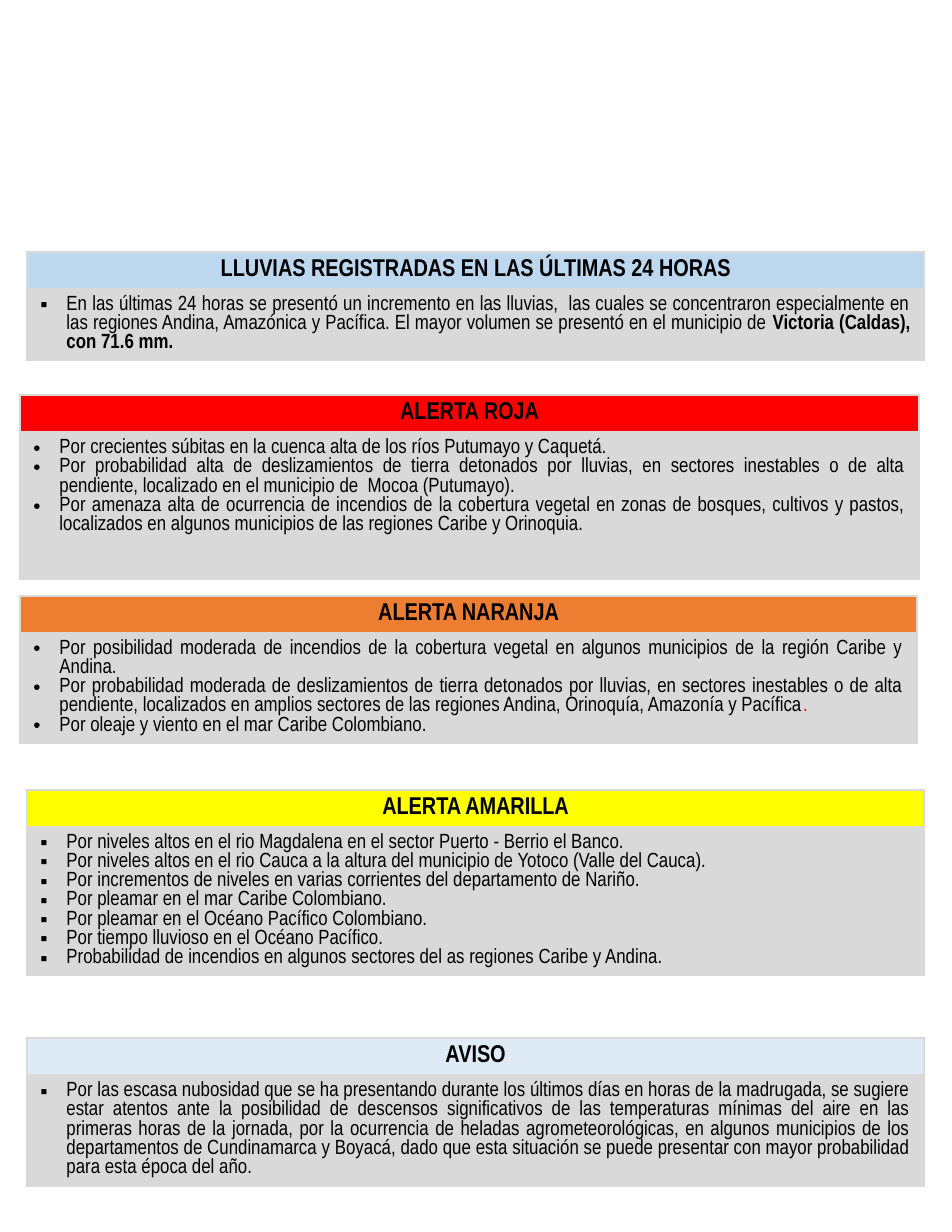
import lxml.etree
import pptx
import pptx.dml.color
import pptx.enum.text
import pptx.oxml
import pptx.oxml.ns
import pptx.util

BLACK = pptx.dml.color.RGBColor(0x00, 0x00, 0x00)
RED = pptx.dml.color.RGBColor(0xFF, 0x00, 0x00)
ORANGE = pptx.dml.color.RGBColor(0xED, 0x7D, 0x31)
YELLOW = pptx.dml.color.RGBColor(0xFF, 0xFF, 0x00)
BLUE = pptx.dml.color.RGBColor(0xBD, 0xD7, 0xEE)
PALE_BLUE = pptx.dml.color.RGBColor(0xDE, 0xEB, 0xF7)
GRAY = pptx.dml.color.RGBColor(0xD9, 0xD9, 0xD9)

FONT = "Arial Narrow"
SQUARE, DOT = "▪", "•"
PLAIN, BOLD, RED_TEXT = "plain", "bold", "red"

PANELS = [
    {
        "title": "LLUVIAS REGISTRADAS EN LAS ÚLTIMAS 24 HORAS",
        "color": BLUE, "bullet": SQUARE, "box": (27, 252, 897), "rows": (36, 72),
        "items": [
            [("En las últimas 24 horas se presentó un incremento en las lluvias,  las cuales se "
              "concentraron especialmente en las regiones Andina, Amazónica y Pacífica. El mayor "
              "volumen se presentó en el municipio de ", PLAIN),
             ("Victoria (Caldas), con 71.6 mm.", BOLD)],
        ],
    },
    {
        "title": "ALERTA ROJA",
        "color": RED, "bullet": DOT, "box": (20, 395, 899), "rows": (37, 147),
        "items": [
            [("Por crecientes súbitas en la cuenca alta de los ríos Putumayo y Caquetá.", PLAIN)],
            [("Por probabilidad alta de deslizamientos de tierra detonados por lluvias, en sectores "
              "inestables o de alta pendiente, localizado en el municipio de  Mocoa (Putumayo).", PLAIN)],
            [("Por amenaza alta de ocurrencia de incendios de la cobertura vegetal en zonas de bosques, "
              "cultivos y pastos, localizados en algunos municipios de las regiones Caribe y Orinoquia.",
              PLAIN)],
        ],
    },
    {
        "title": "ALERTA NARANJA",
        "color": ORANGE, "bullet": DOT, "box": (20, 596, 897), "rows": (36, 111),
        "items": [
            [("Por posibilidad moderada de incendios de la cobertura vegetal en algunos municipios de "
              "la región Caribe y Andina.", PLAIN)],
            [("Por probabilidad moderada de deslizamientos de tierra detonados por lluvias, en sectores "
              "inestables o de alta pendiente, localizados en amplios sectores de las regiones Andina, "
              "Orinoquía, Amazonía y Pacífica", PLAIN),
             (".", RED_TEXT)],
            [("Por oleaje y viento en el mar Caribe Colombiano.", PLAIN)],
        ],
    },
    {
        "title": "ALERTA AMARILLA",
        "color": YELLOW, "bullet": SQUARE, "box": (27, 790, 897), "rows": (36, 149),
        "items": [
            [("Por niveles altos en el rio Magdalena en el sector Puerto - Berrio el Banco.", PLAIN)],
            [("Por niveles altos en el rio Cauca a la altura del municipio de Yotoco (Valle del Cauca).",
              PLAIN)],
            [("Por incrementos de niveles en varias corrientes del departamento de Nariño.", PLAIN)],
            [("Por pleamar en el mar Caribe Colombiano.", PLAIN)],
            [("Por pleamar en el Océano Pacífico Colombiano.", PLAIN)],
            [("Por tiempo lluvioso en el Océano Pacífico.", PLAIN)],
            [("Probabilidad de incendios en algunos sectores del as regiones Caribe y Andina.", PLAIN)],
        ],
    },
    {
        "title": "AVISO",
        "color": PALE_BLUE, "bullet": SQUARE, "box": (27, 1038, 897), "rows": (37, 111),
        "items": [
            [("Por las escasa nubosidad que se ha presentando durante los últimos días en horas de la "
              "madrugada, se sugiere estar atentos ante la posibilidad de descensos significativos de "
              "las temperaturas mínimas del aire en las primeras horas de la jornada, por la ocurrencia "
              "de heladas agrometeorológicas, en algunos municipios de los departamentos de Cundinamarca "
              "y Boyacá, dado que esta situación se puede presentar con mayor probabilidad para esta "
              "época del año.", PLAIN)],
        ],
    },
]

SLIDE_SIZE = (952, 1232)
INDENT = 26
PIXELS_PER_INCH = 134.3


def px(length):
    return pptx.util.Emu(round(length * 914400 / PIXELS_PER_INCH))


def style_cell(cell, color):
    properties = cell._tc.get_or_add_tcPr()
    for side in ("lnL", "lnR", "lnT", "lnB"):
        properties.append(pptx.oxml.parse_xml(
            f'<a:{side} {pptx.oxml.ns.nsdecls("a")} w="12700"><a:solidFill>'
            f'<a:srgbClr val="{GRAY}"/></a:solidFill></a:{side}>'))
    cell.fill.solid()
    cell.fill.fore_color.rgb = color


def style_paragraph(paragraph, size, bold, alignment):
    paragraph.alignment = alignment
    paragraph.font.name = FONT
    paragraph.font.size = pptx.util.Pt(size)
    paragraph.font.bold = bold
    paragraph.font.color.rgb = BLACK


def add_bullet(paragraph, character):
    properties = paragraph._p.get_or_add_pPr()
    properties.set("marL", str(px(INDENT)))
    properties.set("indent", str(-px(INDENT)))
    for tag, attribute, value in (("a:buFont", "typeface", "Arial"), ("a:buChar", "char", character)):
        element = lxml.etree.SubElement(properties, pptx.oxml.ns.qn(tag))
        element.set(attribute, value)


def fill_items(text_frame, items, bullet):
    for index, runs in enumerate(items):
        paragraph = text_frame.add_paragraph() if index else text_frame.paragraphs[0]
        add_bullet(paragraph, bullet)
        style_paragraph(paragraph, 11, False, pptx.enum.text.PP_ALIGN.JUSTIFY)
        for text, style in runs:
            run = paragraph.add_run()
            run.text = text
            if style == BOLD:
                run.font.bold = True
            elif style == RED_TEXT:
                run.font.color.rgb = RED


def add_panel(slide, panel):
    left, top, width = panel["box"]
    frame = slide.shapes.add_table(2, 1, px(left), px(top), px(width), px(sum(panel["rows"])))
    table = frame.table
    table.first_row = False
    table.horz_banding = False
    for row, height in zip(table.rows, panel["rows"]):
        row.height = px(height)
    header, body = table.cell(0, 0), table.cell(1, 0)
    style_cell(header, panel["color"])
    style_cell(body, GRAY)
    title = header.text_frame.paragraphs[0]
    title.text = panel["title"]
    style_paragraph(title, 13, True, pptx.enum.text.PP_ALIGN.CENTER)
    fill_items(body.text_frame, panel["items"], panel["bullet"])


def main():
    presentation = pptx.Presentation()
    presentation.slide_width, presentation.slide_height = map(px, SLIDE_SIZE)
    slide = presentation.slides.add_slide(presentation.slide_layouts[6])
    for panel in PANELS:
        add_panel(slide, panel)
    presentation.save("out.pptx")


if __name__ == "__main__":
    main()
